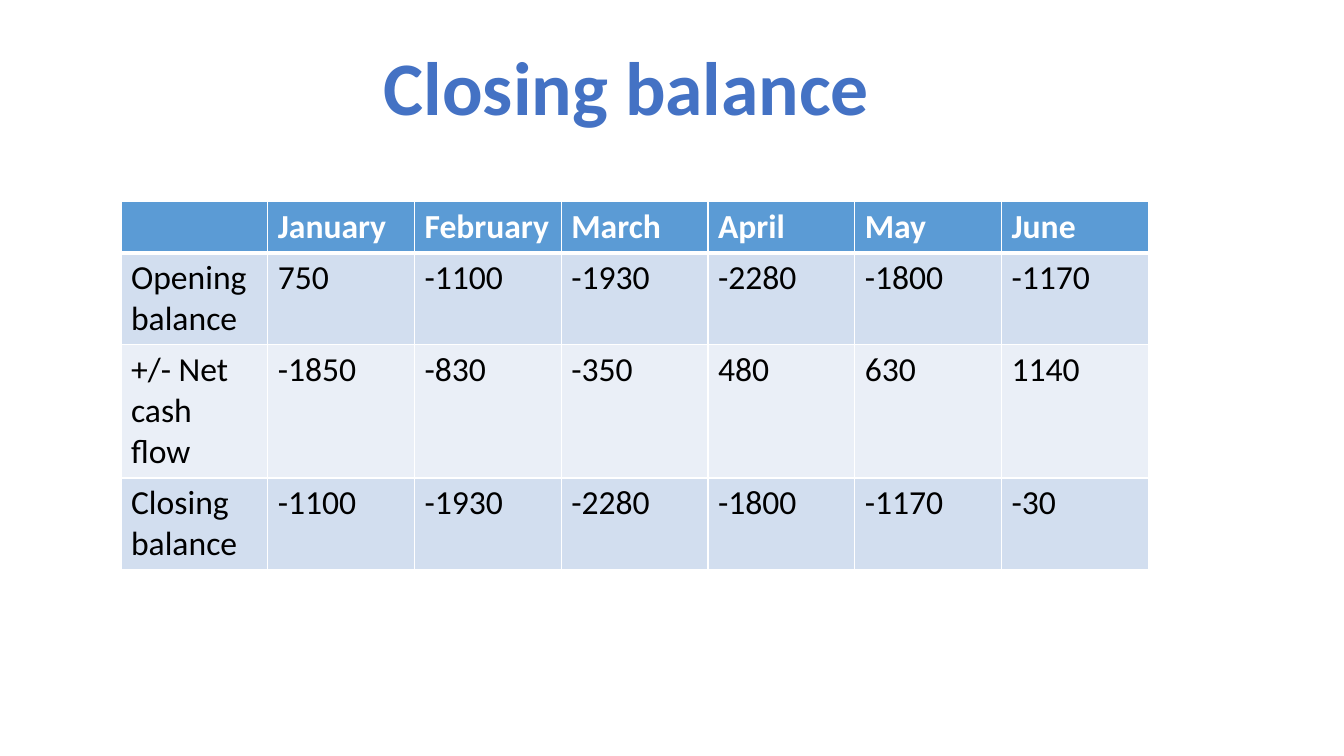
from pptx import Presentation
from pptx.dml.color import RGBColor
from pptx.enum.text import MSO_AUTO_SIZE as Fit, PP_ALIGN as Align
from pptx.oxml.ns import qn
from pptx.util import Inches, Pt
from lxml.etree import SubElement as Sub

HEAD = ["", "January", "February", "March", "April", "May", "June"]
ROWS = [
    HEAD,
    ["Opening balance", 750, -1100, -1930, -2280, -1800, -1170],
    ["+/- Net cash flow", -1850, -830, -350, 480, 630, 1140],
    ["Closing balance", -1100, -1930, -2280, -1800, -1170, -30],
]
HIGHS = [0.5, 0.9, 1.3, 0.9]
BANDS = ["5B9BD5", "D2DEEF", "EAEFF7", "D2DEEF"]


def color(code):
    return RGBColor.from_string(code)


def style(para, size, code, bold):
    for run in para.runs:
        font = run.font
        font.name, font.size, font.bold = "Calibri", Pt(size), bold
        font.color.rgb = color(code)


def border(cell, sides):
    props = cell._tc.get_or_add_tcPr()
    for side, width in sides.items():
        line = Sub(props, qn("a:ln" + side), w=str(Pt(width)))
        fill = Sub(line, qn("a:solidFill"))
        Sub(fill, qn("a:srgbClr"), val="FFFFFF")


def add_title(slide, left, top, width, height):
    box = slide.shapes.add_textbox(
        Inches(left), Inches(top), Inches(width), Inches(height))
    frame = box.text_frame
    frame.word_wrap = False
    frame.auto_size = Fit.SHAPE_TO_FIT_TEXT
    frame.text = "Closing balance "
    para = frame.paragraphs[0]
    para.alignment = Align.CENTER
    style(para, 54, "4472C4", True)


def add_grid(slide, left, top, width, height):
    table = slide.shapes.add_table(
        len(ROWS), len(HEAD), Inches(left), Inches(top),
        Inches(width), Inches(height)).table
    for col in table.columns:
        col.width = Inches(width / len(HEAD))
    for r, values in enumerate(ROWS):
        table.rows[r].height = Inches(height * HIGHS[r] / sum(HIGHS))
        sides = {"L": 1, "R": 1, "T": 3 if r == 1 else 1,
                 "B": 3 if r == 0 else 1}
        for c, value in enumerate(values):
            cell = table.cell(r, c)
            border(cell, sides)
            cell.fill.solid()
            cell.fill.fore_color.rgb = color(BANDS[r])
            cell.text_frame.text = str(value)
            style(cell.text_frame.paragraphs[0], 24,
                  "000000" if r else "FFFFFF", r == 0)


def main():
    deck = Presentation()
    deck.slide_width, deck.slide_height = Inches(13.33), Inches(7.5)
    slide = deck.slides.add_slide(deck.slide_layouts[6])
    add_grid(slide, 1.2, 2, 10.19, 3.6)
    add_title(slide, 3.68, 0.35, 5.24, 1.01)
    deck.save("out.pptx")


if __name__ == "__main__":
    main()
